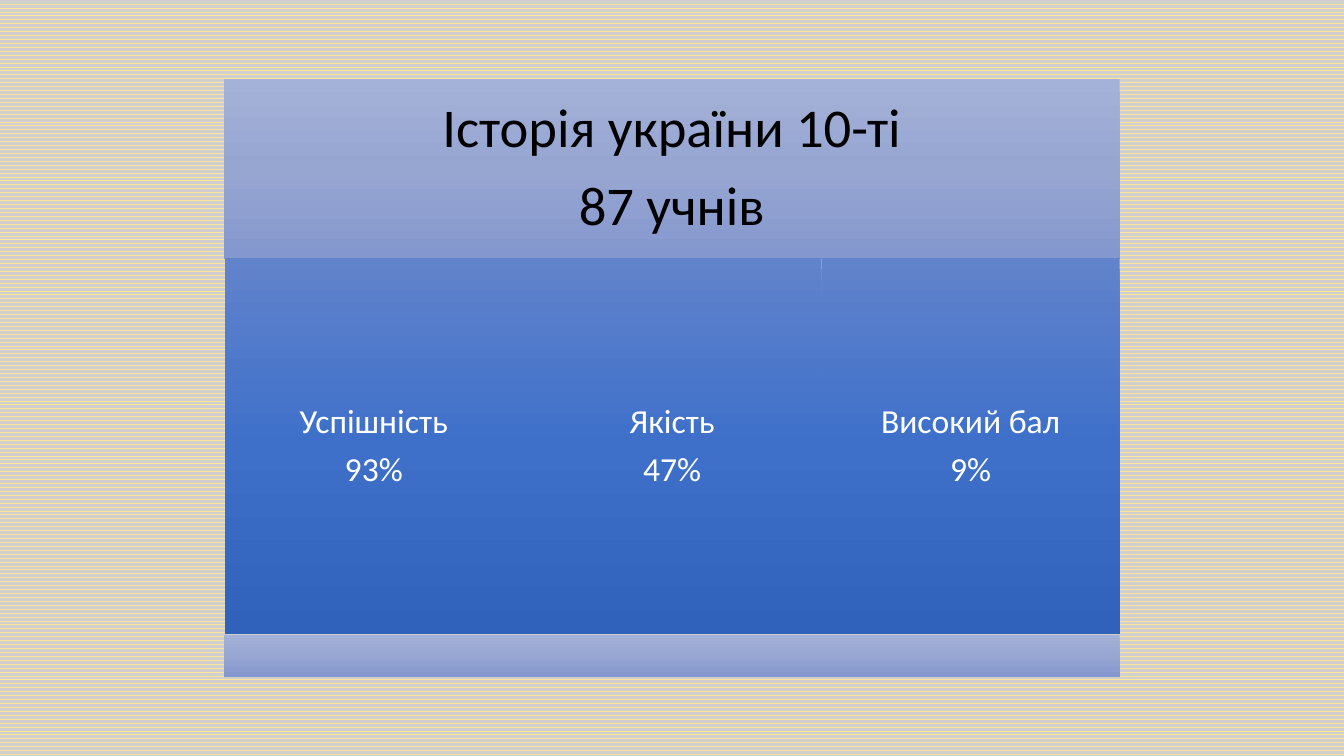
"""Build a slide with the grade 10 history results."""
from dataclasses import dataclass

import lxml.etree
import pptx
import pptx.dml.color
import pptx.enum.dml
import pptx.enum.shapes
import pptx.enum.text
import pptx.oxml.ns
import pptx.slide
import pptx.util

RGBColor = pptx.dml.color.RGBColor
Cm = pptx.util.Cm

BLACK = RGBColor(0x00, 0x00, 0x00)
WHITE = RGBColor(0xFF, 0xFF, 0xFF)
WAVE_YELLOW = RGBColor(0xFF, 0xE6, 0x99)
WAVE_GREY = RGBColor(0xD0, 0xCE, 0xCE)
PALE_BLUES = (
    RGBColor(0xA4, 0xB2, 0xD9),
    RGBColor(0x97, 0xA6, 0xD1),
    RGBColor(0x84, 0x97, 0xCE),
)
DEEP_BLUES = (
    RGBColor(0x61, 0x83, 0xCB),
    RGBColor(0x3E, 0x70, 0xCA),
    RGBColor(0x30, 0x62, 0xBB),
)

RESULTS = (("Успішність", "93%"), ("Якість", "47%"), ("Високий бал", "9%"))
BOARD_LEFT, BOARD_WIDTH = 5.64, 22.58
RESULT_LEFT, RESULT_WIDTH = 5.66, 7.52


@dataclass(frozen=True)
class Panel:
    """A gradient rectangle with centred lines, measured in centimetres."""

    left: float
    top: float
    width: float
    height: float
    blues: tuple[RGBColor, ...]
    lines: tuple[str, ...] = ()
    size: float = 24
    inset: float = 0.25
    ink: RGBColor = WHITE


def fill_gradient(rectangle, blues: tuple[RGBColor, ...]) -> None:
    """Fill a rectangle from top to bottom with evenly spaced colours."""
    qn = pptx.oxml.ns.qn
    rectangle.fill.gradient()
    rectangle.fill.gradient_angle = 270
    stops = next(rectangle._element.spPr.iter(qn("a:gsLst")))
    for stop in list(stops):
        stops.remove(stop)
    for index, blue in enumerate(blues):
        position = 100000 * index // (len(blues) - 1)
        stop = lxml.etree.SubElement(stops, qn("a:gs"), pos=str(position))
        lxml.etree.SubElement(stop, qn("a:srgbClr"), val=str(blue))


def draw_panel(slide: pptx.slide.Slide, panel: Panel) -> None:
    """Draw one panel with its text."""
    rectangle = slide.shapes.add_shape(
        pptx.enum.shapes.MSO_SHAPE.RECTANGLE,
        Cm(panel.left), Cm(panel.top), Cm(panel.width), Cm(panel.height),
    )
    rectangle.shadow.inherit = False
    rectangle.line.fill.background()
    fill_gradient(rectangle, panel.blues)
    if not panel.lines:
        return
    frame = rectangle.text_frame
    frame.word_wrap = True
    frame.vertical_anchor = pptx.enum.text.MSO_ANCHOR.MIDDLE
    frame.margin_left = frame.margin_right = Cm(panel.inset)
    frame.margin_top = frame.margin_bottom = Cm(panel.inset)
    frame.text = "\n".join(panel.lines)
    for paragraph in frame.paragraphs:
        paragraph.alignment = pptx.enum.text.PP_ALIGN.CENTER
        paragraph.line_spacing = 0.9
        paragraph.space_after = pptx.util.Pt(0.35 * panel.size)
        for run in paragraph.runs:
            run.font.name = "Calibri"
            run.font.size = pptx.util.Pt(panel.size)
            run.font.color.rgb = panel.ink


def main() -> None:
    """Build and save the presentation."""
    deck = pptx.Presentation()
    deck.slide_width, deck.slide_height = Cm(33.87), Cm(19.05)
    slide = deck.slides.add_slide(deck.slide_layouts[6])

    backdrop = slide.background.fill
    backdrop.patterned()
    backdrop.pattern = pptx.enum.dml.MSO_PATTERN.WAVE
    backdrop.fore_color.rgb = WAVE_YELLOW
    backdrop.back_color.rgb = WAVE_GREY

    heading = Panel(
        BOARD_LEFT, 2, BOARD_WIDTH, 4.52, PALE_BLUES,
        ("Історія україни 10-ті", "87 учнів"), size=39, inset=0.41, ink=BLACK,
    )
    results = [
        Panel(RESULT_LEFT + index * RESULT_WIDTH, 6.51, RESULT_WIDTH, 9.48, DEEP_BLUES, lines)
        for index, lines in enumerate(RESULTS)
    ]
    base = Panel(BOARD_LEFT, 16, BOARD_WIDTH, 1.05, PALE_BLUES)
    for panel in (heading, *results, base):
        draw_panel(slide, panel)

    deck.save("out.pptx")


if __name__ == "__main__":
    main()
